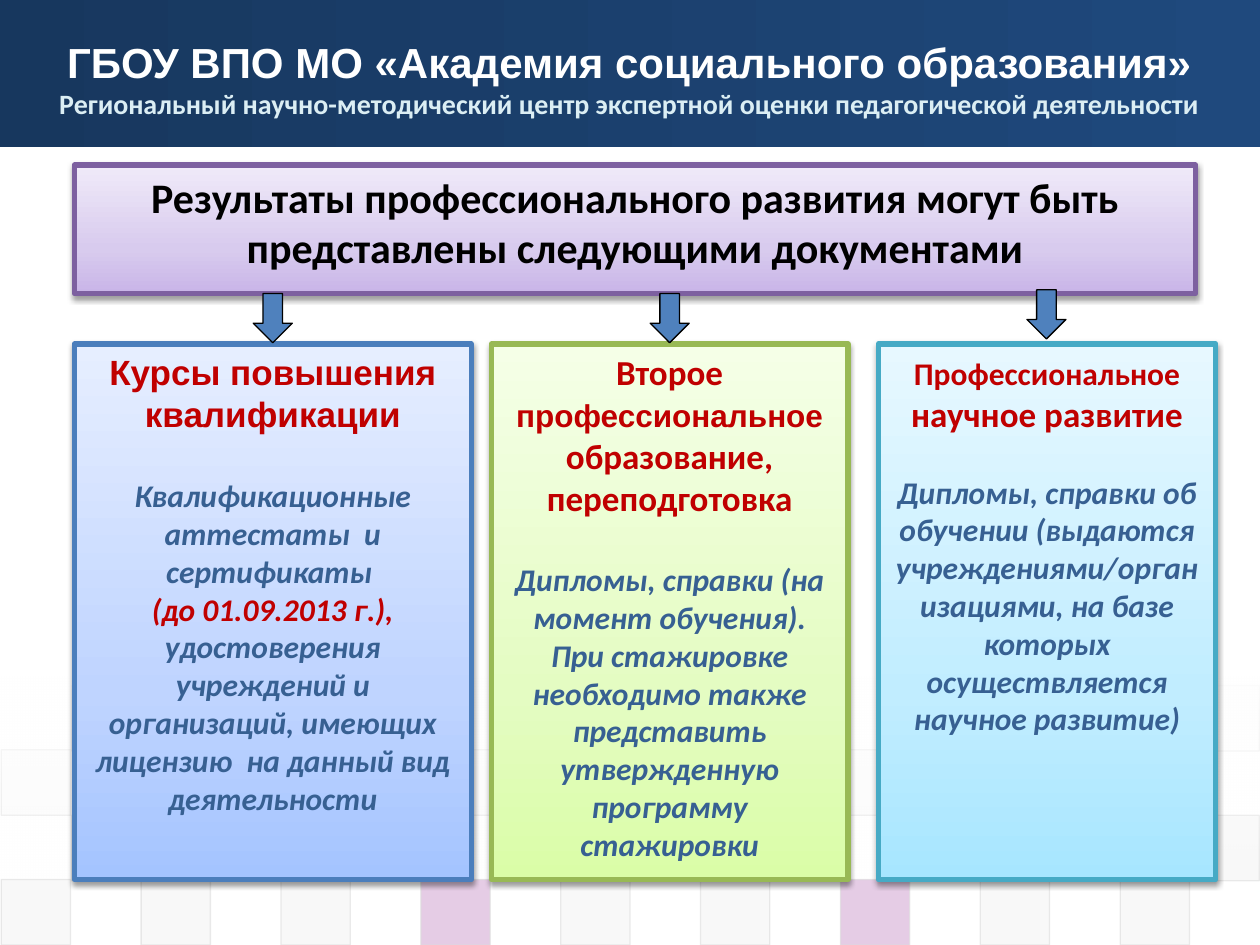
import pptx
import pptx.dml.color
import pptx.enum.shapes
import pptx.enum.text
import pptx.oxml.ns
import pptx.util
from lxml import etree

Inches = pptx.util.Inches
Pt = pptx.util.Pt
RGBColor = pptx.dml.color.RGBColor
SHAPE = pptx.enum.shapes.MSO_SHAPE
ANCHOR = pptx.enum.text.MSO_ANCHOR
ALIGN = pptx.enum.text.PP_ALIGN
qn = pptx.oxml.ns.qn

WHITE = RGBColor(0xFF, 0xFF, 0xFF)
BLACK = RGBColor(0x00, 0x00, 0x00)
NAVY = RGBColor(0x17, 0x37, 0x5E)
DEEP_BLUE = RGBColor(0x1F, 0x49, 0x7D)
PALE_AQUA = RGBColor(0xDB, 0xEE, 0xF4)
RED = RGBColor(0xC0, 0x00, 0x00)
BLUE = RGBColor(0x37, 0x60, 0x92)
ARROW_BLUE = RGBColor(0x4F, 0x81, 0xBD)
GRAY = RGBColor(0xDD, 0xDD, 0xDD)
LIGHT_GRAY = RGBColor(0xEA, 0xEA, 0xEA)
PURPLE = RGBColor(0x80, 0x00, 0x80)
BRICK = RGBColor(0xC0, 0x50, 0x4D)

VIOLET_THEME = (RGBColor(0x7D, 0x60, 0xA0), RGBColor(0xC9, 0xB5, 0xE8),
                RGBColor(0xD8, 0xCB, 0xEE), RGBColor(0xF0, 0xEA, 0xF9))
BLUE_THEME = (RGBColor(0x4B, 0x7E, 0xBC), RGBColor(0xA4, 0xC4, 0xFF),
              RGBColor(0xBF, 0xD4, 0xFF), RGBColor(0xE6, 0xEE, 0xFF))
GREEN_THEME = (RGBColor(0x98, 0xB9, 0x55), RGBColor(0xDA, 0xFD, 0xA7),
               RGBColor(0xE4, 0xFC, 0xC2), RGBColor(0xF5, 0xFF, 0xE7))
AQUA_THEME = (RGBColor(0x46, 0xAA, 0xC5), RGBColor(0xA7, 0xE6, 0xFF),
              RGBColor(0xC1, 0xED, 0xFF), RGBColor(0xE7, 0xF8, 0xFF))


def add_run(p, text, size=18, font="Calibri", color=BLUE, bold=True, italic=False):
    r = p.add_run()
    r.text = text
    r.font.size = Pt(size)
    r.font.name = font
    r.font.color.rgb = color
    r.font.bold = bold
    r.font.italic = italic


def set_alpha(clr, percent):
    etree.SubElement(clr, qn("a:alpha"), val=str(percent * 1000))


class SlideBuilder:
    tile_colors = {"D": GRAY, "E": LIGHT_GRAY, "P": PURPLE, "R": BRICK}
    tile_pitch = 0.555
    tile_size = (0.55, 0.52)

    def __init__(self, slide):
        self.slide = slide

    def shape(self, kind, x, y, w, h):
        sp = self.slide.shapes.add_shape(kind, Inches(x), Inches(y), Inches(w), Inches(h))
        sp.shadow.inherit = False
        sp.line.fill.background()
        return sp

    def gradient_rect(self, x, y, w, h, stops, angle):
        sp = self.shape(SHAPE.RECTANGLE, x, y, w, h)
        sp.fill.gradient()
        grad = sp._element.spPr.find(qn("a:gradFill"))
        gs_list = grad.find(qn("a:gsLst"))
        for gs in list(gs_list):
            gs_list.remove(gs)
        for position, color, alpha in stops:
            gs = etree.SubElement(gs_list, qn("a:gs"), pos=str(position * 1000))
            clr = etree.SubElement(gs, qn("a:srgbClr"), val=str(color))
            if alpha < 100:
                set_alpha(clr, alpha)
        grad.find(qn("a:lin")).set("ang", str(angle * 60000))
        return sp

    def tile_row(self, y, pattern, first, alpha):
        for i, key in enumerate(pattern):
            x = 0.01 + (first + 2 * i) * self.tile_pitch
            sp = self.shape(SHAPE.RECTANGLE, x, y, *self.tile_size)
            sp.fill.solid()
            sp.fill.fore_color.rgb = self.tile_colors[key]
            sp.line.color.rgb = GRAY
            sp.line.width = Pt(0.75)
            spPr = sp._element.spPr
            set_alpha(spPr.find(qn("a:solidFill"))[0], alpha)
            set_alpha(spPr.find(qn("a:ln")).find(qn("a:solidFill"))[0], 60)

    def text(self, sp, paragraphs, top=0.05):
        tf = sp.text_frame
        tf.word_wrap = True
        tf.vertical_anchor = ANCHOR.TOP
        tf.margin_top = Inches(top)
        for i, (runs, spacing) in enumerate(paragraphs):
            p = tf.paragraphs[0] if i == 0 else tf.add_paragraph()
            p.alignment = ALIGN.CENTER
            for name, value in spacing.items():
                setattr(p, name, Pt(value))
            for content, fmt in runs:
                add_run(p, content, **fmt)

    def text_box(self, x, y, w, h, paragraphs, top):
        sp = self.slide.shapes.add_textbox(Inches(x), Inches(y), Inches(w), Inches(h))
        self.text(sp, paragraphs, top)

    def panel(self, x, y, w, h, theme, paragraphs):
        border, dark, middle, light = theme
        stops = [(0, dark, 100), (35, middle, 100), (100, light, 100)]
        sp = self.gradient_rect(x, y, w, h, stops, 270)
        sp.line.color.rgb = border
        sp.line.width = Pt(3)
        effects = sp._element.spPr.find(qn("a:effectLst"))
        shadow = etree.SubElement(effects, qn("a:outerShdw"), blurRad=str(Pt(3.1)),
                                  dist=str(Pt(1.6)), dir="5400000", rotWithShape="0")
        set_alpha(etree.SubElement(shadow, qn("a:srgbClr"), val=str(BLACK)), 38)
        self.text(sp, paragraphs)

    def down_arrow(self, x, y):
        sp = self.shape(SHAPE.DOWN_ARROW, x, y, 0.31, 0.39)
        sp.fill.solid()
        sp.fill.fore_color.rgb = ARROW_BLUE
        sp.line.color.rgb = BLACK
        sp.line.width = Pt(0.75)


def main():
    prs = pptx.Presentation()
    prs.slide_width = Inches(10)
    prs.slide_height = Inches(7.5)
    page = SlideBuilder(prs.slides.add_slide(prs.slide_layouts[6]))

    page.gradient_rect(0, 0, 10, 1.17, [(0, NAVY, 100), (100, DEEP_BLUE, 100)], 0)
    for y, pattern, first, alpha in [
        (5.44, "PEEPDPERE", 1, 5),
        (5.95, "DDDDRDDDP", 0, 10),
        (6.47, "DRDDDDRDD", 1, 20),
        (6.98, "DDDPDDPDD", 0, 20),
    ]:
        page.tile_row(y, pattern, first, alpha)
    page.gradient_rect(0, 5.37, 10, 1.62, [(0, WHITE, 90), (100, WHITE, 0)], 90)

    page.text_box(0.01, 0.21, 9.97, 0.87, [
        ([("ГБОУ ВПО МО «Академия социального образования»",
           dict(size=24, font="Arial", color=WHITE))], {}),
        ([("Региональный научно-методический центр экспертной оценки педагогической деятельности",
           dict(size=16, color=PALE_AQUA))], {}),
    ], 0.08)

    page.panel(0.59, 1.31, 8.9, 1.02, VIOLET_THEME, [
        ([("Результаты профессионального развития могут быть представлены следующими документами",
           dict(size=24, color=BLACK))], {}),
    ])

    heading = dict(size=20, color=RED)
    body = dict(italic=True)
    columns = [
        (0.59, 3.15, BLUE_THEME, [
            ([("Курсы повышения квалификации", dict(heading, font="Arial"))],
             dict(line_spacing=24)),
            ([("Квалификационные аттестаты  и сертификаты ", body)], dict(space_before=24)),
            ([("(до 01.09.2013 г.), ", dict(body, color=RED)),
              ("удостоверения учреждений и организаций, имеющих лицензию  на данный вид деятельности",
               body)], {}),
        ]),
        (3.9, 2.83, GREEN_THEME, [
            ([("Второе ", heading),
              ("профессиональное", dict(heading, size=18, font="Arial")),
              (" образование, переподготовка", heading)], {}),
            ([("Дипломы, справки (на момент обучения).", body)], dict(space_before=24)),
            ([("При стажировке необходимо также представить утвержденную программу стажировки",
               body)], {}),
        ]),
        (6.97, 2.68, AQUA_THEME, [
            ([("Профессиональное", dict(heading, size=18)),
              (" научное развитие", heading)], {}),
            ([("Дипломы, справки об обучении (выдаются учреждениями/организациями, "
               "на базе которых осуществляется научное развитие)", body)],
             dict(space_before=22)),
        ]),
    ]
    for x, w, theme, paragraphs in columns:
        page.panel(x, 2.73, w, 4.25, theme, paragraphs)

    for x, y in [(2.01, 2.33), (8.15, 2.3), (5.16, 2.33)]:
        page.down_arrow(x, y)

    prs.save("out.pptx")


if __name__ == "__main__":
    main()
